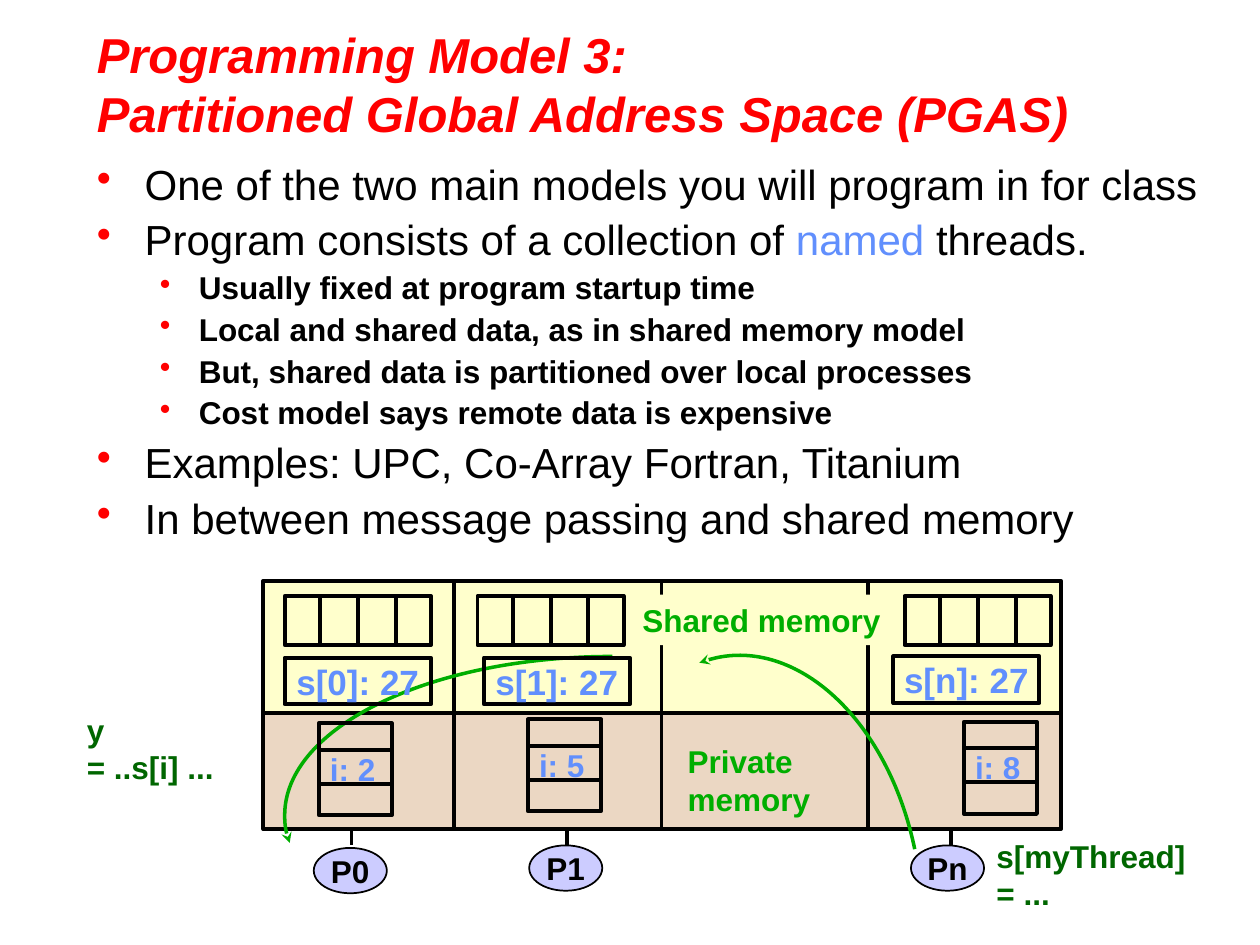
"""Build the slide on the partitioned global address space programming model."""
from lxml import etree
from pptx import Presentation
from pptx.dml.color import RGBColor
from pptx.enum.shapes import MSO_CONNECTOR, MSO_SHAPE
from pptx.enum.text import MSO_ANCHOR, PP_ALIGN
from pptx.oxml.ns import qn
from pptx.util import Inches, Pt

STRAIGHT = MSO_CONNECTOR.STRAIGHT
RECTANGLE, OVAL = MSO_SHAPE.RECTANGLE, MSO_SHAPE.OVAL
TOP, MIDDLE = MSO_ANCHOR.TOP, MSO_ANCHOR.MIDDLE
LEFT, CENTER = PP_ALIGN.LEFT, PP_ALIGN.CENTER

RED = RGBColor(0xFF, 0x00, 0x00)
BLACK = RGBColor(0x00, 0x00, 0x00)
BLUE = RGBColor(0x61, 0x8F, 0xFD)
GREEN = RGBColor(0x00, 0xAE, 0x00)
DARK_GREEN = RGBColor(0x00, 0x66, 0x00)
LAVENDER = RGBColor(0xCC, 0xCC, 0xFF)
YELLOW = RGBColor(0xFF, 0xFF, 0xCC)
TAN = RGBColor(0xEB, 0xD7, 0xC3)

TITLE = ["Programming Model 3:", "Partitioned Global Address Space (PGAS)"]
BULLETS = [
    (0, [("One of the two main models you will program in for class", BLACK)]),
    (0, [("Program consists of a collection of ", BLACK), ("named", BLUE), (" threads.", BLACK)]),
    (1, [("Usually fixed at program startup time", BLACK)]),
    (1, [("Local and shared data, as in shared memory model", BLACK)]),
    (1, [("But, shared data is partitioned over local processes", BLACK)]),
    (1, [("Cost model says remote data is expensive", BLACK)]),
    (0, [("Examples: UPC, Co-Array Fortran, Titanium", BLACK)]),
    (0, [("In between message passing and shared memory", BLACK)]),
]
LEVELS = [
    {"size": 24, "bold": False, "margin": 0.38, "hang": 0.38, "before": 6},
    {"size": 18, "bold": True, "margin": 0.81, "hang": 0.31, "before": 4.4},
]

MEMORY_LEFT, MEMORY_WIDTH = 2.09, 6.33
SHARED_TOP, PRIVATE_TOP, PRIVATE_BOTTOM = 4.61, 5.66, 6.58
PARTITIONS = [3.6, 5.25, 6.89]
PROCESSES = [
    {"name": "P0", "oval": (2.49, 6.73), "stem": 2.79, "array": 2.26,
     "shared": ("s[0]: 27", 2.26, 5.22), "private": ("i: 2", 2.53, 5.74)},
    {"name": "P1", "oval": (4.2, 6.71), "stem": 4.5, "array": 3.79,
     "shared": ("s[1]: 27", 3.84, 5.22), "private": ("i: 5", 4.19, 5.71)},
    {"name": "Pn", "oval": (7.23, 6.71), "stem": 7.55, "array": 7.18,
     "shared": ("s[n]: 27", 7.09, 5.21), "private": ("i: 8", 7.65, 5.73)},
]
ARROWS = [
    [(2.3, 6.69), (2.27, 6.62), (2.26, 6.54), (2.26, 6.47),
     (2.26, 5.77), (3.42, 5.21), (4.86, 5.21)],
    [(5.55, 5.26), (5.6, 5.24), (5.65, 5.23), (5.69, 5.22),
     (6.35, 5.08), (7.05, 5.73), (7.26, 6.74)],
]
LABELS = [
    (["s[myThread]", "= ..."], (7.81, 6.59, 2.19, 0.7), DARK_GREEN),
    (["y", "= ..s[i] ..."], (0.59, 5.59, 1.42, 0.7), DARK_GREEN),
    (["Private", "memory"], (5.36, 5.84, 1.33, 0.7), GREEN),
]


def add_span(para, text, size, color, bold=True, italic=False):
    span = para.add_run()
    span.text = text
    font = span.font
    font.name, font.size, font.bold, font.italic = "Arial", Pt(size), bold, italic
    font.color.rgb = color


def write(box, lines, size, color, align=LEFT, anchor=TOP, wrap=False, italic=False):
    frame = box.text_frame
    frame.word_wrap, frame.vertical_anchor = wrap, anchor
    para = frame.paragraphs[0]
    para.alignment = align
    for index, line in enumerate(lines):
        if index:
            para.add_line_break()
        add_span(para, line, size, color, italic=italic)


def add_text(page, bounds, lines, size, color, **layout):
    box = page.shapes.add_textbox(*map(Inches, bounds))
    write(box, lines, size, color, **layout)


def add_box(page, kind, bounds, fill=None, weight=2.25):
    box = page.shapes.add_shape(kind, *map(Inches, bounds))
    box.shadow.inherit = False
    if fill is None:
        box.fill.background()
    else:
        box.fill.solid()
        box.fill.fore_color.rgb = fill
    if weight:
        box.line.color.rgb = BLACK
        box.line.width = Pt(weight)
    else:
        box.line.fill.background()
    return box


def add_line(page, *ends):
    line = page.shapes.add_connector(STRAIGHT, *map(Inches, ends))
    line.line.color.rgb = BLACK
    line.line.width = Pt(2.25)
    etree.SubElement(line._element.spPr, qn("a:effectLst"))


def add_curved_arrow(page, points):
    places = [(Inches(x), Inches(y)) for x, y in points]
    builder = page.shapes.build_freeform(*places[0])
    builder.add_line_segments(places[1:], close=False)
    arrow = builder.convert_to_shape()
    segments = list(arrow._element.iter(qn("a:lnTo")))
    for start in range(0, len(segments), 3):
        curve = etree.Element(qn("a:cubicBezTo"))
        segments[start].addprevious(curve)
        for segment in segments[start:start + 3]:
            curve.append(segment[0])
            segment.getparent().remove(segment)
    arrow.shadow.inherit = False
    arrow.fill.background()
    arrow.line.color.rgb = GREEN
    arrow.line.width = Pt(2)
    etree.SubElement(arrow.line._get_or_add_ln(), qn("a:headEnd"), type="stealth")


def add_bullets(page):
    box = page.shapes.add_textbox(*map(Inches, (0.67, 1.25, 9.33, 3.31)))
    frame = box.text_frame
    frame.word_wrap = True
    for index, (level, spans) in enumerate(BULLETS):
        para = frame.add_paragraph() if index else frame.paragraphs[0]
        style = LEVELS[level]
        para.level = level
        para.line_spacing, para.space_before = 0.9, Pt(style["before"])
        properties = para._p.get_or_add_pPr()
        properties.set("marL", str(Inches(style["margin"])))
        properties.set("indent", str(-Inches(style["hang"])))
        color = etree.SubElement(properties, qn("a:buClr"))
        etree.SubElement(color, qn("a:srgbClr"), val=str(RED))
        etree.SubElement(properties, qn("a:buChar"), char="•")
        for text, shade in spans:
            add_span(para, text, style["size"], shade, style["bold"])


def add_process(page, process):
    stem = process["stem"]
    add_line(page, stem, PRIVATE_BOTTOM, stem, PRIVATE_BOTTOM + 0.13)
    oval = add_box(page, OVAL, (*process["oval"], 0.58, 0.36), LAVENDER, 1)
    write(oval, [process["name"]], 18, BLACK, CENTER, MIDDLE)

    left = process["array"]
    for column in range(3):
        x = left + 0.28 + 0.3 * column
        add_line(page, x, 4.73, x, 5.13)
    add_box(page, RECTANGLE, (left, 4.73, 1.16, 0.39))

    text, left, top = process["shared"]
    shared = add_box(page, RECTANGLE, (left, top, 1.16, 0.37))
    write(shared, [text], 20, BLUE, CENTER, MIDDLE)

    text, left, top = process["private"]
    add_text(page, (left - 0.01, top + 0.16, 0.56, 0.4), [text], 18, BLUE)
    add_box(page, RECTANGLE, (left, top, 0.58, 0.73))
    for drop in (0.21, 0.48):
        add_line(page, left, top + drop, left + 0.58, top + drop)


def main():
    deck = Presentation()
    deck.slide_width, deck.slide_height = Inches(10), Inches(7.5)
    page = deck.slides.add_slide(deck.slide_layouts[6])
    add_text(page, (0.67, 0.33, 8.92, 0.67), TITLE, 28, RED,
             anchor=MIDDLE, wrap=True, italic=True)
    add_bullets(page)
    for top, bottom, fill in ((SHARED_TOP, PRIVATE_TOP, YELLOW),
                              (PRIVATE_TOP, PRIVATE_BOTTOM, TAN)):
        add_box(page, RECTANGLE, (MEMORY_LEFT, top, MEMORY_WIDTH, bottom - top), fill)
        for x in PARTITIONS:
            add_line(page, x, top, x, bottom)
    for points in ARROWS:
        add_curved_arrow(page, points)
    for process in PROCESSES:
        add_process(page, process)
    for lines, bounds, color in LABELS:
        add_text(page, bounds, lines, 18, color)
    shared_label = add_box(page, RECTANGLE, (5, 4.72, 2.09, 0.4), YELLOW, 0)
    write(shared_label, ["Shared memory"], 18, GREEN)
    deck.save("out.pptx")


if __name__ == "__main__":
    main()
